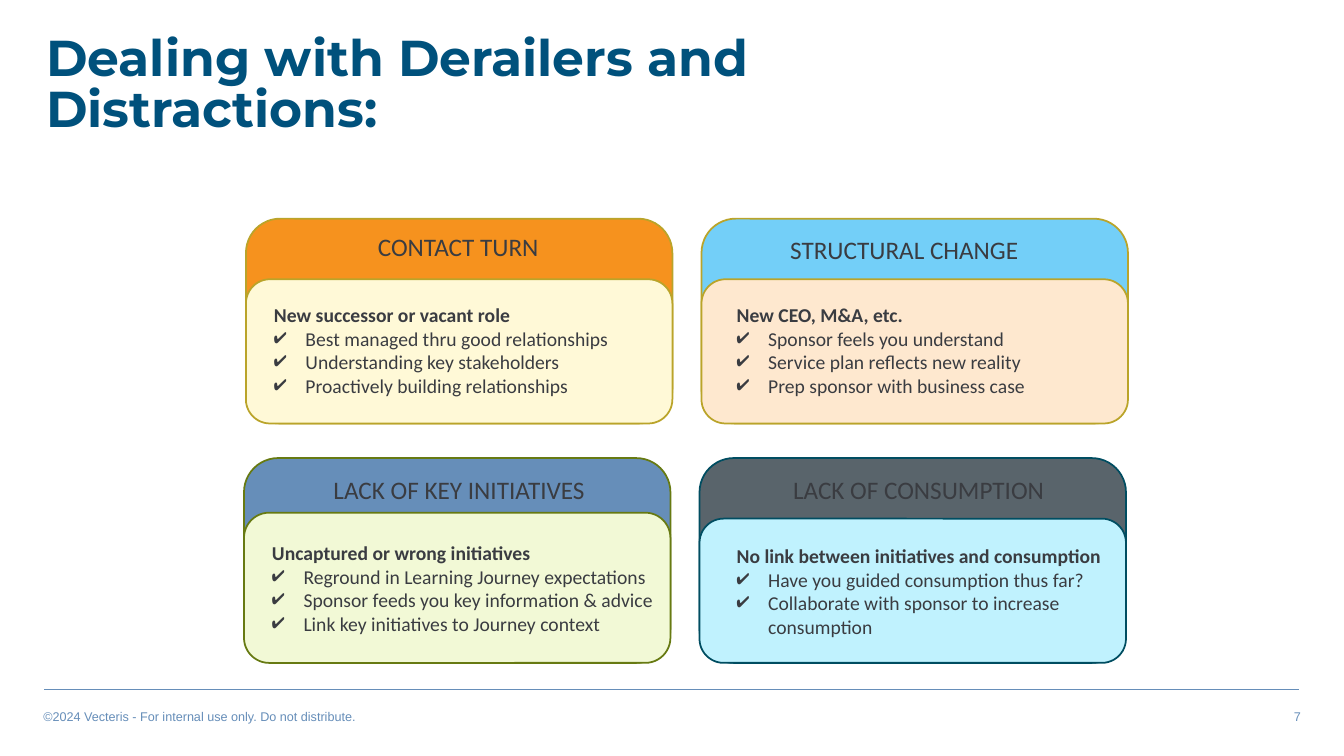
from lxml import etree
from pptx import Presentation
from pptx.dml.color import RGBColor
from pptx.enum.shapes import MSO_CONNECTOR, MSO_SHAPE
from pptx.enum.text import MSO_ANCHOR, PP_ALIGN
from pptx.oxml.ns import qn
from pptx.util import Pt

LEFT, RIGHT = PP_ALIGN.LEFT, PP_ALIGN.RIGHT
TOP, BOTTOM = MSO_ANCHOR.TOP, MSO_ANCHOR.BOTTOM
ROUNDED, STRAIGHT = MSO_SHAPE.ROUNDED_RECTANGLE, MSO_CONNECTOR.STRAIGHT

TITLE = "Dealing with Derailers and Distractions:"
FOOTER = "©2024 Vecteris - For internal use only. Do not distribute."
PAGE_NUMBER = "7"

# Cards run left to right, then down. Boxes are (left, top, width, height) in points.
CARDS = [
    dict(label="CONTACT TURN", label_box=(262.8, 162, 130.3, 28.8),
         lead="New successor or vacant role",
         points=["Best managed thru good relationships",
                 "Understanding key stakeholders",
                 "Proactively building relationships"],
         body_box=(188.6, 213.1, 255.6, 74.9), panel_height=103,
         header="F6921E", panel="FFF9D7", outline="BAA42A"),
    dict(label="STRUCTURAL CHANGE", label_box=(557.3, 163.8, 179.3, 28.8),
         lead="New CEO, M&A, etc.",
         points=["Sponsor feels you understand",
                 "Service plan reflects new reality",
                 "Prep sponsor with business case"],
         body_box=(519.1, 213.1, 229.7, 74.9), panel_height=103,
         header="73CFF8", panel="FEE8CF", outline="BAA42A"),
    dict(label="LACK OF KEY INITIATIVES", label_box=(231.1, 335.5, 203, 28.8),
         lead="Uncaptured or wrong initiatives",
         points=["Reground in Learning Journey expectations",
                 "Sponsor feeds you key information & advice",
                 "Link key initiatives to Journey context"],
         body_box=(187.2, 383, 288.7, 77.8), panel_height=107.3,
         header="668EB9", panel="F2F9D6", outline="677A12"),
    dict(label="LACK OF CONSUMPTION", label_box=(559.4, 335.5, 195.8, 28.8),
         lead="No link between initiatives and consumption",
         points=["Have you guided consumption thus far?",
                 "Collaborate with sponsor to increase consumption"],
         body_box=(519.1, 385.2, 276.5, 74.9), panel_height=103,
         header="59646B", panel="C0F2FE", outline="004D61"),
]

THEME = dict(title="00517C", text="3A3C41", footer="668EB9",
             title_font="Montserrat", body_font="Calibri", footer_font="Arial",
             title_size=36, label_size=18, body_size=14, footer_size=9)

GRID_LEFT, GRID_TOP = 175.7, 156.2
CARD_WIDTH, CARD_HEIGHT = 304.6, 146.3
COLUMN_STEP, ROW_STEP = 325.4, 171
ROW_SHIFT = -1.4
CORNER = 0.167
HANGING = 22.5


def points(values):
    return [Pt(value) for value in values]


def make_bullet(para):
    """Give the paragraph a check mark with a hanging indent."""
    properties = para._p.get_or_add_pPr()
    properties.set("marL", str(Pt(HANGING)))
    properties.set("indent", str(-Pt(HANGING)))
    color = etree.SubElement(properties, qn("a:buClr"))
    etree.SubElement(color, qn("a:srgbClr")).set("val", THEME["text"])
    etree.SubElement(properties, qn("a:buChar")).set("char", "✔")


def add_text(page, lines, box, *, font, size, color, bold=False, align=LEFT,
             anchor=TOP, spacing=None, wrap=True, bulleted=False):
    """Write lines in a box; if bulleted, the first line is a bold lead."""
    frame = page.shapes.add_textbox(*points(box)).text_frame
    frame.word_wrap = wrap
    frame.vertical_anchor = anchor
    for index, line in enumerate(lines):
        para = frame.add_paragraph() if index else frame.paragraphs[0]
        if bulleted and index:
            make_bullet(para)
        para.alignment = align
        if spacing:
            para.line_spacing = spacing
        span = para.add_run()
        span.text = line
        span.font.name = font
        span.font.size = Pt(size)
        span.font.bold = bold or (bulleted and index == 0)
        span.font.color.rgb = RGBColor.from_string(color)


def add_rounded(page, box, fill, outline):
    shape = page.shapes.add_shape(ROUNDED, *points(box))
    shape.adjustments[0] = CORNER
    shape.shadow.inherit = False
    shape.fill.solid()
    shape.fill.fore_color.rgb = RGBColor.from_string(fill)
    shape.line.color.rgb = RGBColor.from_string(outline)
    shape.line.width = Pt(1.25)


def add_card(page, index, card):
    row, column = divmod(index, 2)
    left = GRID_LEFT + column * COLUMN_STEP + row * ROW_SHIFT
    top = GRID_TOP + row * ROW_STEP
    panel_top = top + CARD_HEIGHT - card["panel_height"]
    add_rounded(page, (left, top, CARD_WIDTH, CARD_HEIGHT),
                card["header"], card["outline"])
    add_rounded(page, (left, panel_top, CARD_WIDTH, card["panel_height"]),
                card["panel"], card["outline"])
    style = dict(font=THEME["body_font"], color=THEME["text"])
    add_text(page, [card["label"]], card["label_box"],
             size=THEME["label_size"], wrap=False, **style)
    add_text(page, [card["lead"], *card["points"]], card["body_box"],
             size=THEME["body_size"], bulleted=True, **style)


def add_footer(page):
    rule = page.shapes.add_connector(STRAIGHT, *points((31.7, 492.5, 928, 492.5)))
    rule.line.color.rgb = RGBColor.from_string(THEME["footer"])
    rule.line.width = Pt(1)
    etree.SubElement(rule._element.spPr, qn("a:effectLst"))
    style = dict(font=THEME["footer_font"], size=THEME["footer_size"],
                 color=THEME["footer"])
    add_text(page, [FOOTER], (23.8, 502.6, 384, 18), **style)
    add_text(page, [PAGE_NUMBER], (552.2, 502.6, 384, 18), align=RIGHT, **style)


def main():
    deck = Presentation()
    deck.slide_width, deck.slide_height = Pt(960), Pt(540)
    page = deck.slides.add_slide(deck.slide_layouts[6])
    add_footer(page)
    add_text(page, [TITLE], (25.9, 47.5, 652.3, 54.7), font=THEME["title_font"],
             size=THEME["title_size"], color=THEME["title"], bold=True,
             anchor=BOTTOM, spacing=0.85)
    for index, card in enumerate(CARDS):
        add_card(page, index, card)
    deck.save("out.pptx")


if __name__ == "__main__":
    main()
